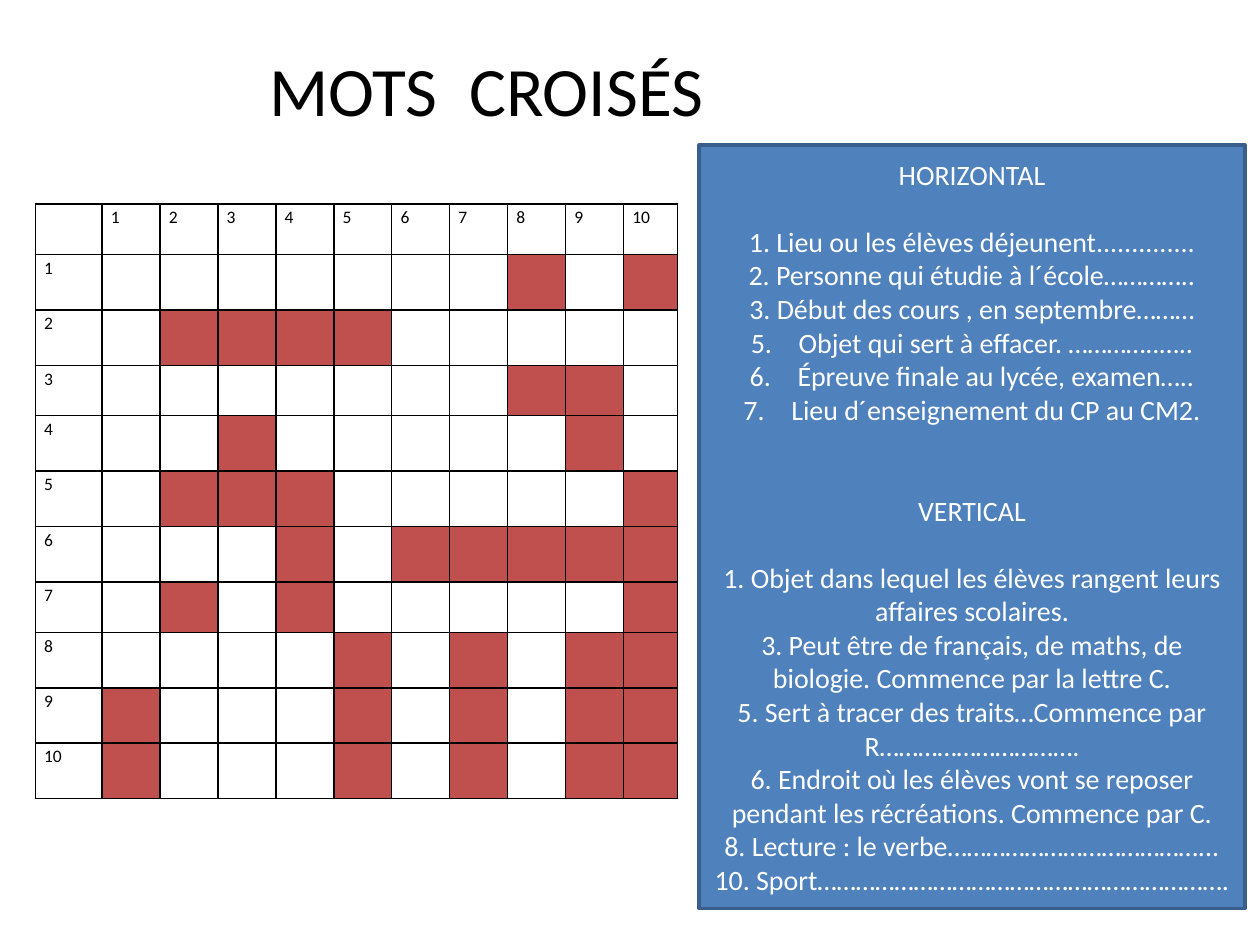
"""Build a French school crossword slide with its grid and clues."""
from lxml import etree
from pptx import Presentation
from pptx.dml.color import RGBColor
from pptx.enum import shapes, text
from pptx.oxml import ns
from pptx.util import Inches, Pt

THEME = {
    "font": "Calibri",
    "title_size": 39.6, "clue_size": 16, "number_size": 10,
    "clue_line": 19.2,
    "black": "000000", "white": "FFFFFF",
    "panel": "4F81BD", "panel_line": "3A5F8C", "blocked": "C0504D",
}
TITLE = "MOTS  CROISÉS"
GRID = [
    ".......#.#",
    ".####.....",
    ".......##.",
    "..#.....#.",
    ".###.....#",
    "...#.#####",
    ".#.#.....#",
    "....#.#.##",
    "#...#.#.##",
    "#...#.#.##",
]
SHORT_ROWS = {0, 3, 7}
COLUMN_WIDTHS = [0.53] + [0.46] * 9 + [0.43]

HEADING, CLUE, NUMBERED = range(3)
CLUES = [
    (HEADING, "HORIZONTAL"),
    (CLUE, "1. Lieu ou les élèves déjeunent.............."),
    (CLUE, "2. Personne qui étudie à l´école………….."),
    (CLUE, "3. Début des cours , en septembre………"),
    (NUMBERED, "Objet qui sert à effacer. …………..….."),
    (NUMBERED, "Épreuve finale au lycée, examen….."),
    (NUMBERED, "Lieu d´enseignement du CP au CM2."),
    (HEADING, "VERTICAL"),
    (CLUE, "1. Objet dans lequel les élèves rangent leurs affaires scolaires."),
    (CLUE, "3. Peut être de français, de maths, de biologie. Commence par la lettre C."),
    (CLUE, "5. Sert à tracer des traits…Commence par R…………………………."),
    (CLUE, "6. Endroit où les élèves vont se reposer pendant les récréations. "
           "Commence par C."),
    (CLUE, "8. Lecture : le verbe…………………………………..."),
    (CLUE, "10. Sport………………………………………………………."),
]


def color(name):
    return RGBColor.from_string(THEME[name])


def style(paragraph, size, color_name):
    for run in paragraph.runs:
        run.font.name = THEME["font"]
        run.font.size = Pt(THEME[size])
        run.font.color.rgb = color(color_name)


def number_from(paragraph, start):
    properties = paragraph._p.get_or_add_pPr()
    properties.set("marL", str(Inches(0.38)))
    properties.set("indent", str(-Inches(0.38)))
    etree.SubElement(properties, ns.qn("a:buFont"), typeface="+mj-lt")
    etree.SubElement(properties, ns.qn("a:buAutoNum"),
                     type="arabicPeriod", startAt=str(start))


def add_borders(cell):
    properties = cell._tc.get_or_add_tcPr()
    for side in ("lnL", "lnR", "lnT", "lnB"):
        line = etree.SubElement(properties, ns.qn("a:" + side), w=str(Pt(1)))
        fill = etree.SubElement(line, ns.qn("a:solidFill"))
        etree.SubElement(fill, ns.qn("a:srgbClr"), val=THEME["black"])


def add_title(slide):
    title = slide.shapes.title
    title.left, title.top = Inches(0.98), Inches(0.36)
    title.width, title.height = Inches(5.76), Inches(0.69)
    title.text_frame.text = TITLE
    title.text_frame.vertical_anchor = text.MSO_ANCHOR.MIDDLE
    paragraph = title.text_frame.paragraphs[0]
    paragraph.alignment = text.PP_ALIGN.CENTER
    style(paragraph, "title_size", "black")


def add_clues(slide):
    panel = slide.shapes.add_shape(shapes.MSO_SHAPE.RECTANGLE, Inches(5.55),
                                   Inches(1.15), Inches(4.33), Inches(6.06))
    panel.shadow.inherit = False
    panel.fill.solid()
    panel.fill.fore_color.rgb = color("panel")
    panel.line.color.rgb = color("panel_line")
    panel.line.width = Pt(2)
    frame = panel.text_frame
    frame.word_wrap = True
    frame.vertical_anchor = text.MSO_ANCHOR.MIDDLE
    frame.text = "\n".join(wording for kind, wording in CLUES)
    for index, (paragraph, (kind, wording)) in enumerate(zip(frame.paragraphs, CLUES)):
        paragraph.alignment = text.PP_ALIGN.CENTER
        paragraph.line_spacing = Pt(THEME["clue_line"])
        if kind == HEADING:
            paragraph.space_after = Pt(THEME["clue_line"])
            if index:
                paragraph.space_before = Pt(2 * THEME["clue_line"])
        elif kind == NUMBERED:
            number_from(paragraph, 5)
        style(paragraph, "clue_size", "white")


def add_grid(slide):
    numbers = [""] + [str(n) for n in range(1, len(GRID) + 1)]
    heights = [0.4 if row in SHORT_ROWS else 0.44 for row in range(len(numbers))]
    table = slide.shapes.add_table(
        len(heights), len(COLUMN_WIDTHS), Inches(0.28), Inches(1.62),
        Inches(sum(COLUMN_WIDTHS)), Inches(sum(heights))).table
    for column, width in zip(table.columns, COLUMN_WIDTHS):
        column.width = Inches(width)
    for row, height in enumerate(heights):
        table.rows[row].height = Inches(height)
        for column in range(len(COLUMN_WIDTHS)):
            cell = table.cell(row, column)
            add_borders(cell)
            inside = row > 0 and column > 0
            blocked = inside and GRID[row - 1][column - 1] == "#"
            cell.fill.solid()
            cell.fill.fore_color.rgb = color("blocked" if blocked else "white")
            cell.margin_left = cell.margin_right = Inches(0.07)
            cell.margin_top = cell.margin_bottom = 0
            paragraph = cell.text_frame.paragraphs[0]
            paragraph.line_spacing = 1.15
            paragraph.font.size = Pt(THEME["number_size"])
            if not inside and row + column:
                paragraph.text = numbers[row + column]
                style(paragraph, "number_size", "black")
                paragraph.runs[0].font.bold = False


def main():
    presentation = Presentation()
    presentation.slide_width, presentation.slide_height = Inches(10), Inches(7.5)
    slide = presentation.slides.add_slide(presentation.slide_layouts[5])
    add_title(slide)
    add_clues(slide)
    add_grid(slide)
    presentation.save("out.pptx")


if __name__ == "__main__":
    main()
